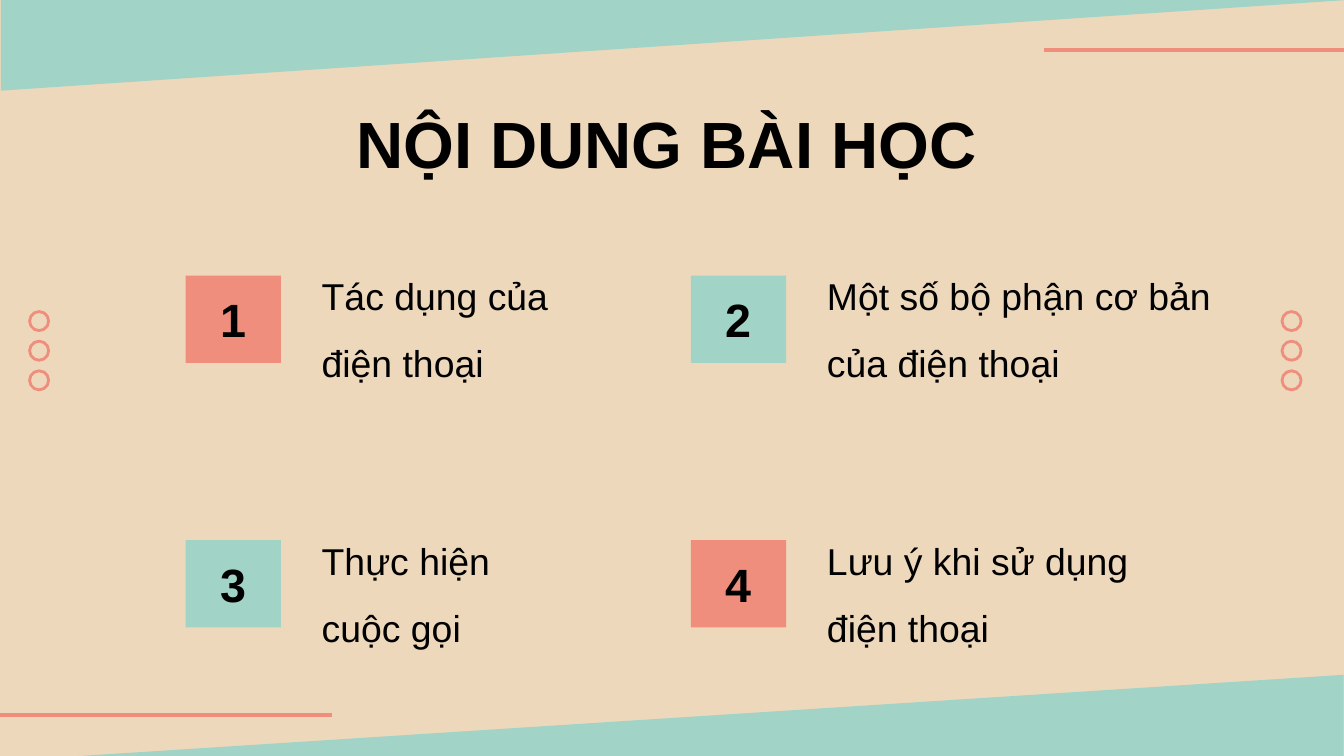
from lxml import etree
from pptx import Presentation
from pptx.dml.color import RGBColor
from pptx.enum.shapes import MSO_CONNECTOR, MSO_SHAPE
from pptx.enum.text import MSO_ANCHOR, MSO_AUTO_SIZE, PP_ALIGN
from pptx.oxml.ns import qn
from pptx.util import Cm, Pt

SAND, MINT, CORAL, BLACK = "EDD8BB", "A2D3C7", "EF8E7D", "000000"

COLUMN_LEFTS = (3.51, 13.06)
FIRST_ROW_TOP, ROW_STEP = 5.21, 5
# Text, text width, badge colour; read row by row
LESSONS = (
    ("Tác dụng của điện thoại", 4.95, CORAL),
    ("Một số bộ phận cơ bản\ncủa điện thoại", 7.8, MINT),
    ("Thực hiện cuộc gọi", 4.95, MINT),
    ("Lưu ý khi sử dụng điện thoại", 6.43, CORAL),
)


def color(hex_value):
    return RGBColor.from_string(hex_value)


def add_shape(slide, kind, left, top, width, height, fill=None, outline=None):
    shape = slide.shapes.add_shape(kind, Cm(left), Cm(top), Cm(width), Cm(height))
    shape.shadow.inherit = False
    if fill:
        shape.fill.solid()
        shape.fill.fore_color.rgb = color(fill)
    else:
        shape.fill.background()
    if outline:
        shape.line.color.rgb = color(outline)
        shape.line.width = Pt(1.5)
    else:
        shape.line.fill.background()
    return shape


def add_wedge(slide, left, top, width, rotation):
    wedge = add_shape(slide, MSO_SHAPE.RIGHT_TRIANGLE, left, top, width, 25.68, fill=MINT)
    wedge.rotation = rotation


def add_rule(slide, left, top):
    rule = slide.shapes.add_connector(
        MSO_CONNECTOR.STRAIGHT, Cm(left), Cm(top), Cm(left + 6.78), Cm(top))
    rule.line.color.rgb = color(CORAL)
    rule.line.width = Pt(2.25)
    etree.SubElement(rule.line._get_or_add_ln().getparent(), qn("a:effectLst"))


def add_rings(slide, left):
    for row in range(3):
        add_shape(slide, MSO_SHAPE.OVAL, left, 5.89 + row * 0.56, 0.36, 0.36, outline=CORAL)


def write(frame, text, size, bold=False, align=PP_ALIGN.LEFT, spacing=None):
    frame.word_wrap = True
    frame.text = text
    for paragraph in frame.paragraphs:
        paragraph.alignment = align
        paragraph.line_spacing = spacing
        for run in paragraph.runs:
            run.font.name = "Arial"
            run.font.size = Pt(size)
            run.font.bold = bold
            run.font.color.rgb = color(BLACK)


def add_text(slide, text, left, top, width, height, size, **style):
    box = slide.shapes.add_textbox(Cm(left), Cm(top), Cm(width), Cm(height))
    write(box.text_frame, text, size, **style)
    box.text_frame.auto_size = MSO_AUTO_SIZE.SHAPE_TO_FIT_TEXT


def add_badge(slide, number, left, top, fill):
    badge = add_shape(slide, MSO_SHAPE.RECTANGLE, left, top, 1.8, 1.65, fill=fill)
    frame = badge.text_frame
    frame.margin_left = frame.margin_right = Cm(0.25)
    frame.margin_top = frame.margin_bottom = Cm(0.25)
    frame.vertical_anchor = MSO_ANCHOR.MIDDLE
    write(frame, str(number), 25, bold=True, align=PP_ALIGN.CENTER)


def add_lesson(slide, index, text, text_width, fill):
    row, column = divmod(index, len(COLUMN_LEFTS))
    left = COLUMN_LEFTS[column]
    top = FIRST_ROW_TOP + row * ROW_STEP
    add_badge(slide, index + 1, left, top, fill)
    add_text(slide, text, left + 2.32, top - 0.59, text_width, 2.82, 20, spacing=1.5)


def main():
    prs = Presentation()
    prs.slide_width, prs.slide_height = Cm(25.4), Cm(14.29)
    slide = prs.slides.add_slide(prs.slide_layouts[6])
    slide.background.fill.solid()
    slide.background.fill.fore_color.rgb = color(SAND)

    # Slanted bands, rules and rings
    add_wedge(slide, 11.73, 0.74, 1.65, 270)
    add_wedge(slide, 11.99, -11.99, 1.73, 90)
    add_rule(slide, 19.74, 0.94)
    add_rule(slide, -0.51, 13.51)
    for left in (24.23, 0.56):
        add_rings(slide, left)

    # Heading
    add_text(slide, "NỘI DUNG BÀI HỌC", -0.1, 1.83, 25.4, 1.75, 35,
             bold=True, align=PP_ALIGN.CENTER)

    # Numbered lesson parts
    for index, lesson in enumerate(LESSONS):
        add_lesson(slide, index, *lesson)

    prs.save("out.pptx")


if __name__ == "__main__":
    main()
